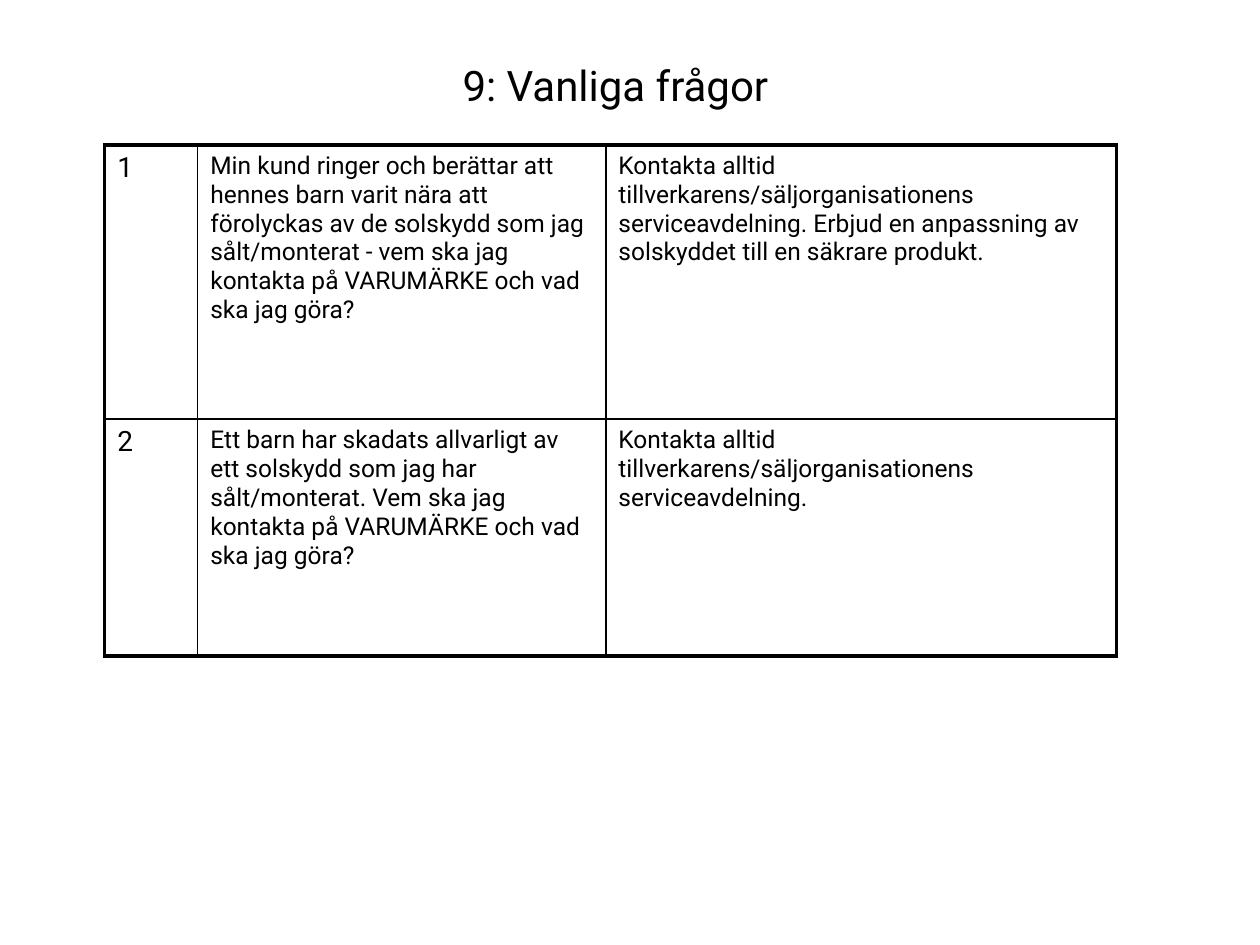
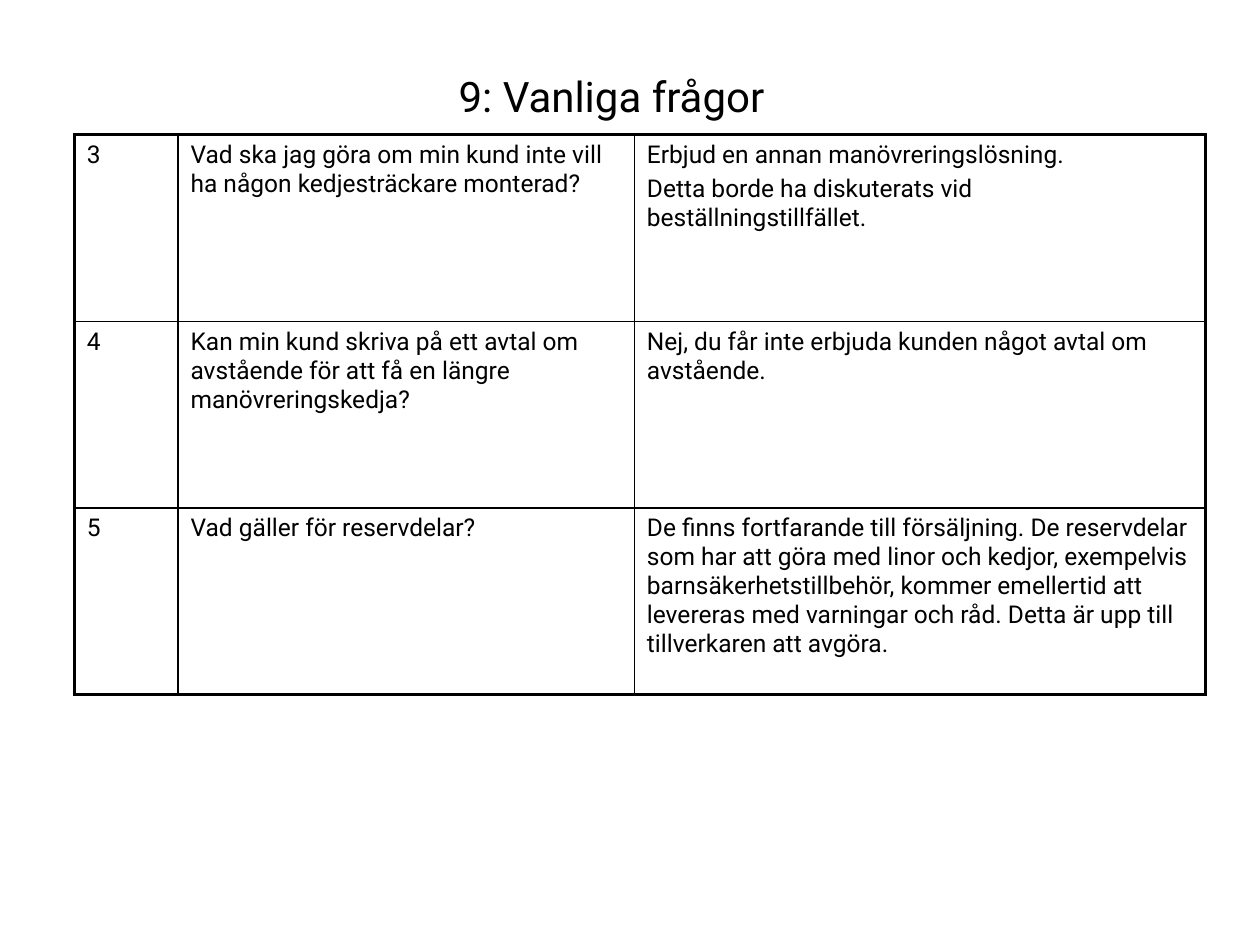
from lxml.etree import SubElement
from pptx import Presentation
from pptx.dml.color import RGBColor
from pptx.enum.text import MSO_ANCHOR, PP_ALIGN
from pptx.oxml.ns import qn
from pptx.util import Pt

FONT = "Roboto"
BLACK = "000000"
TITLE = "9: Vanliga frågor"
TITLE_SIZE = 24
TEXT_SIZE = 14
OUTER_LINE = 2.25
INNER_LINE = 1

slides = [
    {
        "title_box": (144.7, 20.2, 414, 56.9),
        "table_corner": (59.8, 82.8),
        "columns": (53.2, 233.2, 292),
        "rows": (156.7, 135.4),
        "number_size": 16,
        "questions": [
            ("1",
             "Min kund ringer och berättar att hennes barn varit nära att förolyckas av de "
             "solskydd som jag sålt/monterat - vem ska jag kontakta på VARUMÄRKE och vad ska jag göra?",
             "Kontakta alltid tillverkarens/säljorganisationens serviceavdelning. "
             "Erbjud en anpassning av solskyddet till en säkrare produkt."),
            ("2",
             "Ett barn har skadats allvarligt av ett solskydd som jag har sålt/monterat. "
             "Vem ska jag kontakta på VARUMÄRKE och vad ska jag göra?",
             "Kontakta alltid tillverkarens/säljorganisationens serviceavdelning."),
        ],
    },
    {
        "title_box": (127.4, 15.1, 444.2, 79.2),
        "table_corner": (42.5, 77),
        "columns": (59.2, 260.8, 326.4),
        "rows": (106.6,) * 3,
        "number_size": 14,
        "questions": [
            ("3",
             "Vad ska jag göra om min kund inte vill ha någon kedjesträckare monterad?",
             "Erbjud en annan manövreringslösning.\n"
             "Detta borde ha diskuterats vid beställningstillfället."),
            ("4",
             "Kan min kund skriva på ett avtal om avstående för att få en längre manövreringskedja?",
             "Nej, du får inte erbjuda kunden något avtal om avstående."),
            ("5",
             "Vad gäller för reservdelar?",
             "De finns fortfarande till försäljning. De reservdelar som har att göra med linor "
             "och kedjor, exempelvis barnsäkerhetstillbehör, kommer emellertid att levereras "
             "med varningar och råd. Detta är upp till tillverkaren att avgöra."),
        ],
    },
]


def add_run(paragraph, text, size, color=BLACK):
    run = paragraph.add_run()
    run.text = text
    run.font.name = FONT
    run.font.size = Pt(size)
    run.font.color.rgb = RGBColor.from_string(color)


def add_border(cell, side, width, color=BLACK):
    properties = cell._tc.get_or_add_tcPr()
    line = SubElement(properties, qn(f"a:ln{side}"), w=str(Pt(width)))
    fill = SubElement(line, qn("a:solidFill"))
    SubElement(fill, qn("a:srgbClr"), val=color)


presentation = Presentation()
presentation.slide_width = Pt(720)
presentation.slide_height = Pt(540)

for content in slides:
    slide = presentation.slides.add_slide(presentation.slide_layouts[5])
    title = slide.shapes.title
    title.left, title.top, title.width, title.height = map(Pt, content["title_box"])
    title.text_frame.vertical_anchor = MSO_ANCHOR.MIDDLE
    paragraph = title.text_frame.paragraphs[0]
    paragraph.alignment = PP_ALIGN.CENTER
    add_run(paragraph, TITLE, TITLE_SIZE)

    columns, rows = content["columns"], content["rows"]
    left, top = content["table_corner"]
    table = slide.shapes.add_table(
        len(rows), len(columns), Pt(left), Pt(top), Pt(sum(columns)), Pt(sum(rows))
    ).table
    table.first_row = False
    table.horz_banding = False
    for column, width in zip(table.columns, columns):
        column.width = Pt(width)
    for row, height in zip(table.rows, rows):
        row.height = Pt(height)

    for row_index, question in enumerate(content["questions"]):
        for column_index, text in enumerate(question):
            cell = table.cell(row_index, column_index)
            on_edge = {
                "L": column_index == 0,
                "R": column_index == len(columns) - 1,
                "T": row_index == 0,
                "B": row_index == len(rows) - 1,
            }
            for side, outer in on_edge.items():
                add_border(cell, side, OUTER_LINE if outer else INNER_LINE)
            cell.fill.background()

            size = content["number_size"] if column_index == 0 else TEXT_SIZE
            for index, line in enumerate(text.split("\n")):
                if index == 0:
                    paragraph = cell.text_frame.paragraphs[0]
                else:
                    paragraph = cell.text_frame.add_paragraph()
                    paragraph.space_before = Pt(0.2 * size)
                add_run(paragraph, line, size)

presentation.save("out.pptx")
